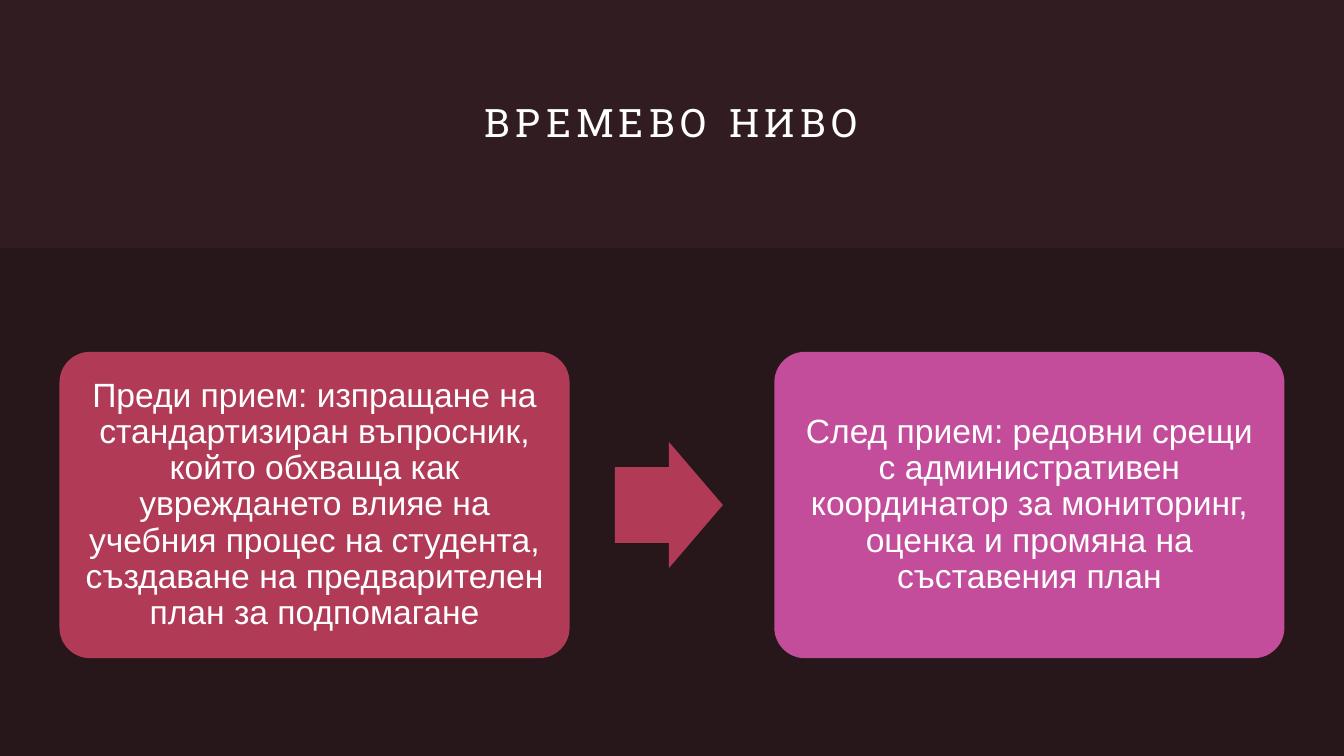
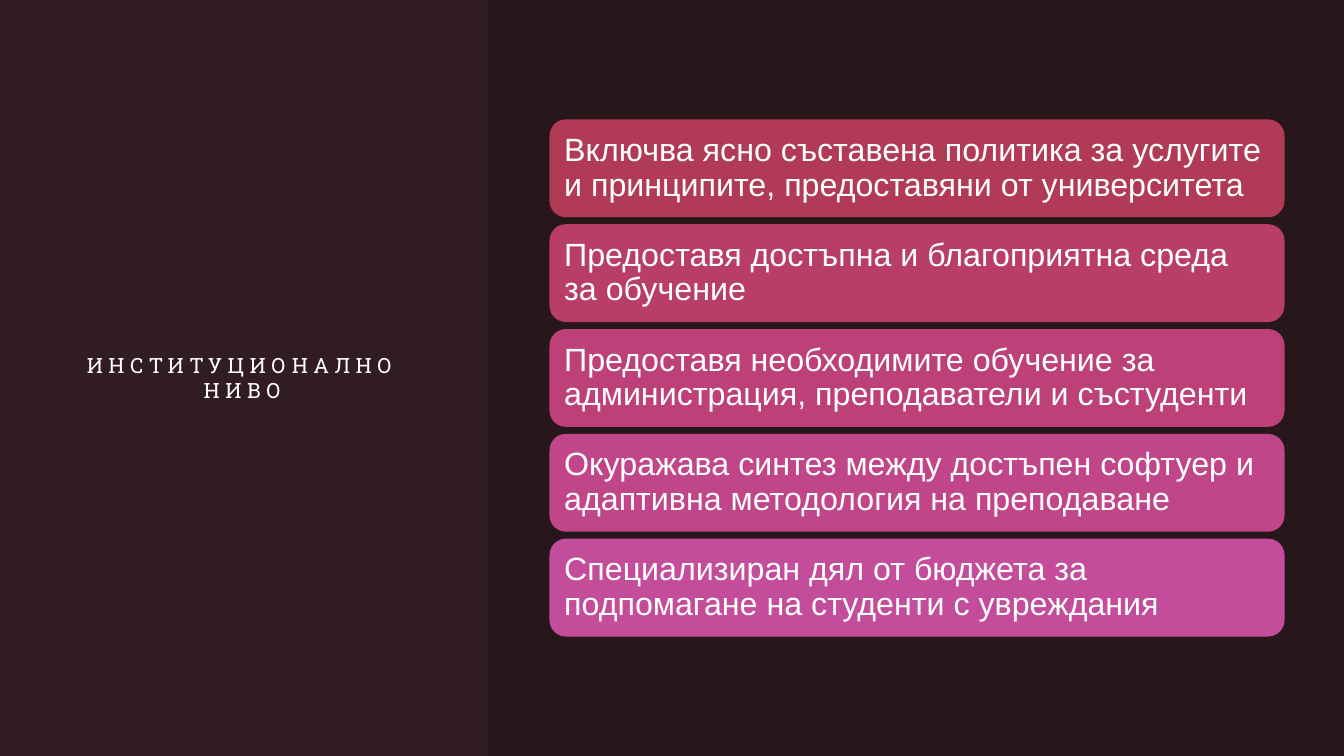
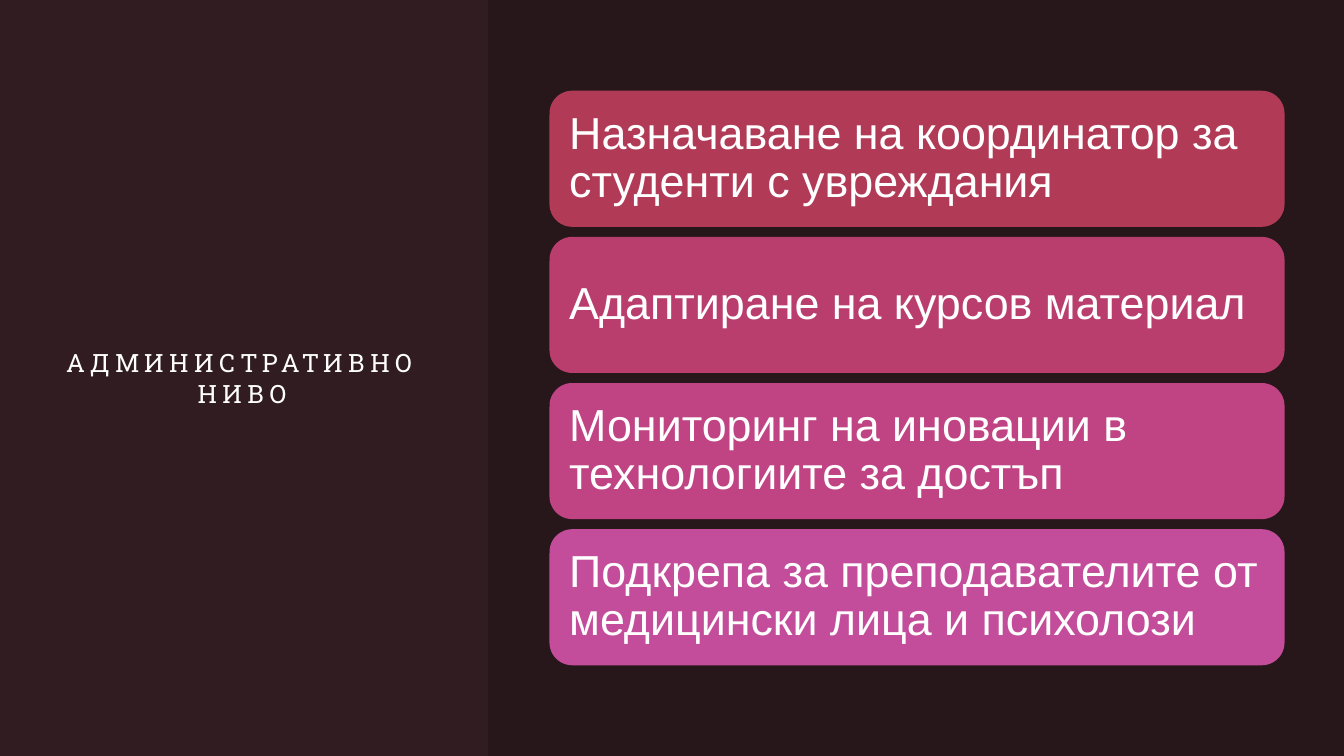
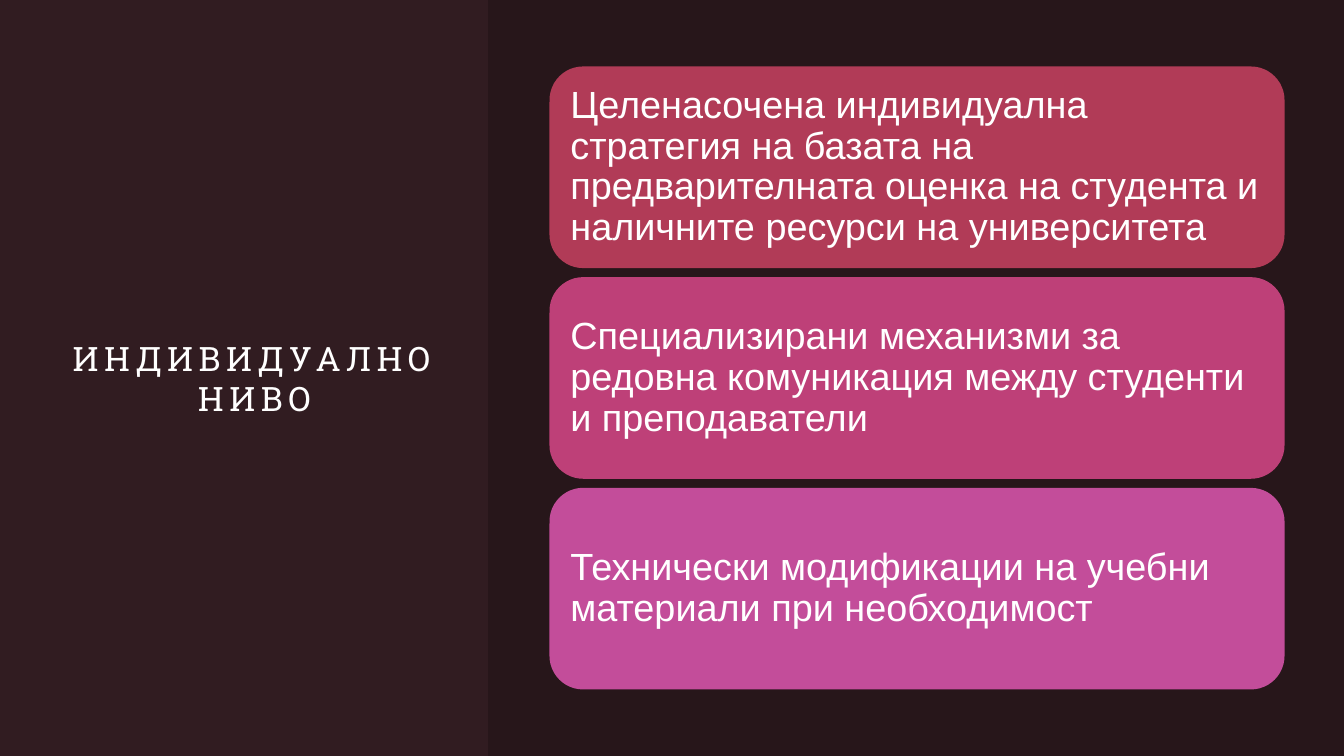
from pptx import Presentation
from pptx import util as u
from pptx.dml import color as c
from pptx.enum import shapes, text
from pptx.oxml import ns
from lxml import etree

# Shared look
WIDTH, HEIGHT = 13.33, 7.5
MARGIN = 0.59
SIDE = 4.84                       # width of the title column
STACK_LEFT = 5.45
STACK_WIDTH = WIDTH - MARGIN - STACK_LEFT
GROUND, SHADE, WHITE = "311C21", "000000", "FFFFFF"
RED, PINK = "B13B57", "C34D9A"
TITLE_FONT, BODY_FONT = "Roboto Slab", "Arial"
CENTER, LEFT = text.PP_ALIGN.CENTER, text.PP_ALIGN.LEFT
ROUNDED = shapes.MSO_SHAPE.ROUNDED_RECTANGLE
hue = c.RGBColor.from_string


def add_block(page, kind, area, fill, opacity=100):
    """Add a flat preset shape without outline or shadow."""
    block = page.shapes.add_shape(kind, *(u.Inches(length) for length in area))
    block.shadow.inherit = False
    block.line.fill.background()
    block.fill.solid()
    block.fill.fore_color.rgb = hue(fill)
    if opacity < 100:
        tint = block.fill._xPr.find(".//" + ns.qn("a:srgbClr"))
        etree.SubElement(tint, ns.qn("a:alpha"), val=str(opacity * 1000))
    return block


def write(box, words, font, size, align, inset=0, line=1.0, tracking=0):
    """Fill a shape or text box with one vertically centred paragraph."""
    frame = box.text_frame
    frame.word_wrap = True
    frame.vertical_anchor = text.MSO_ANCHOR.MIDDLE
    frame.margin_left = frame.margin_right = u.Inches(inset)
    frame.margin_top = frame.margin_bottom = u.Inches(inset)
    para = frame.paragraphs[0]
    para.alignment = align
    para.line_spacing = line
    span = para.add_run()
    span.text = words
    span.font.name = font
    span.font.size = u.Pt(size)
    span.font.color.rgb = hue(WHITE)
    if tracking:
        span.font._element.set("spc", str(tracking * 100))


deck = Presentation()
deck.slide_width, deck.slide_height = u.Inches(WIDTH), u.Inches(HEIGHT)
ground = deck.slide_master.background.fill
ground.solid()
ground.fore_color.rgb = hue(GROUND)

# Titles with their area, text size and the shaded panel beside or below
side_panel = (SIDE, 0, WIDTH - SIDE, HEIGHT)
side_title = (MARGIN, 2 * MARGIN, 3.63, HEIGHT - 4 * MARGIN)
wide_title = (MARGIN, 2 * MARGIN, 3.88, HEIGHT - 4 * MARGIN)
top_title = (2 * MARGIN, MARGIN, WIDTH - 4 * MARGIN, 1.23)
low_panel = (0, 2.46, WIDTH, HEIGHT - 2.46)
headings = [
    ("ВРЕМЕВО НИВО", 28, top_title, low_panel),
    ("ИНСТИТУЦИОНАЛНО НИВО", 15, side_title, side_panel),
    ("АДМИНИСТРАТИВНО НИВО", 18, side_title, side_panel),
    ("ИНДИВИДУАЛНО НИВО", 24, wide_title, side_panel),
]
pages = []
for words, size, area, panel in headings:
    page = deck.slides.add_slide(deck.slide_layouts[6])
    add_block(page, shapes.MSO_SHAPE.RECTANGLE, panel, SHADE, opacity=20)
    title = page.shapes.add_textbox(*(u.Inches(length) for length in area))
    write(title, words, TITLE_FONT, size, CENTER, tracking=4)
    pages.append(page)

# Two stages joined by a block arrow
CARD_WIDTH, CARD_HEIGHT, CARD_TOP = 5.06, 3.04, 3.49
stages = [
    (MARGIN, RED, "Преди прием: изпращане на стандартизиран въпросник, който "
     "обхваща как увреждането влияе на учебния процес на студента, "
     "създаване на предварителен план за подпомагане"),
    (WIDTH - MARGIN - CARD_WIDTH, PINK, "След прием: редовни срещи с "
     "административен координатор за мониторинг, оценка и промяна на "
     "съставения план"),
]
for left, fill, words in stages:
    card = add_block(pages[0], ROUNDED,
                     (left, CARD_TOP, CARD_WIDTH, CARD_HEIGHT), fill)
    card.adjustments[0] = 0.1
    write(card, words, BODY_FONT, 24, CENTER, inset=0.1, line=0.9)
arrow = add_block(pages[0], shapes.MSO_SHAPE.RIGHT_ARROW,
                  (6.1, CARD_TOP + (CARD_HEIGHT - 1.25) / 2, 1.07, 1.25), RED)
arrow.adjustments[0] = 0.6

# Stacks of bars, centred on the slide's height:
# bar height, gap, text size, inset, bars
stacks = [
    (0.97, 0.07, 23, 0.1, [
        (RED, "Включва ясно съставена политика за услугите и принципите, "
              "предоставяни от университета"),
        ("B83D67", "Предоставя достъпна и благоприятна среда за обучение"),
        ("BE4078", "Предоставя необходимите обучение за администрация, "
                   "преподаватели и състуденти"),
        ("C14689", "Окуражава синтез между достъпен софтуер и адаптивна "
                   "методология на преподаване"),
        (PINK, "Специализиран дял от бюджета за подпомагане на студенти "
               "с увреждания"),
    ]),
    (1.35, 0.1, 32, 0.13, [
        (RED, "Назначаване на координатор за студенти с увреждания"),
        ("BA3E6D", "Адаптиране на курсов материал"),
        ("C04484", "Мониторинг на иновации в технологиите за достъп"),
        (PINK, "Подкрепа за преподавателите от медицински лица и психолози"),
    ]),
    (2, 0.09, 27, 0.11, [
        (RED, "Целенасочена индивидуална стратегия на базата на "
              "предварителната оценка на студента и наличните ресурси на "
              "университета"),
        ("BE4078", "Специализирани механизми за редовна комуникация между "
                   "студенти и преподаватели"),
        (PINK, "Технически модификации на учебни материали при "
               "необходимост"),
    ]),
]
for page, (height, gap, size, inset, bars) in zip(pages[1:], stacks):
    pitch = height + gap
    top = (HEIGHT - len(bars) * pitch + gap) / 2
    for row, (fill, words) in enumerate(bars):
        bar = add_block(page, ROUNDED,
                        (STACK_LEFT, top + row * pitch, STACK_WIDTH, height),
                        fill)
        write(bar, words, BODY_FONT, size, LEFT, inset=inset, line=0.9)

deck.save("out.pptx")
